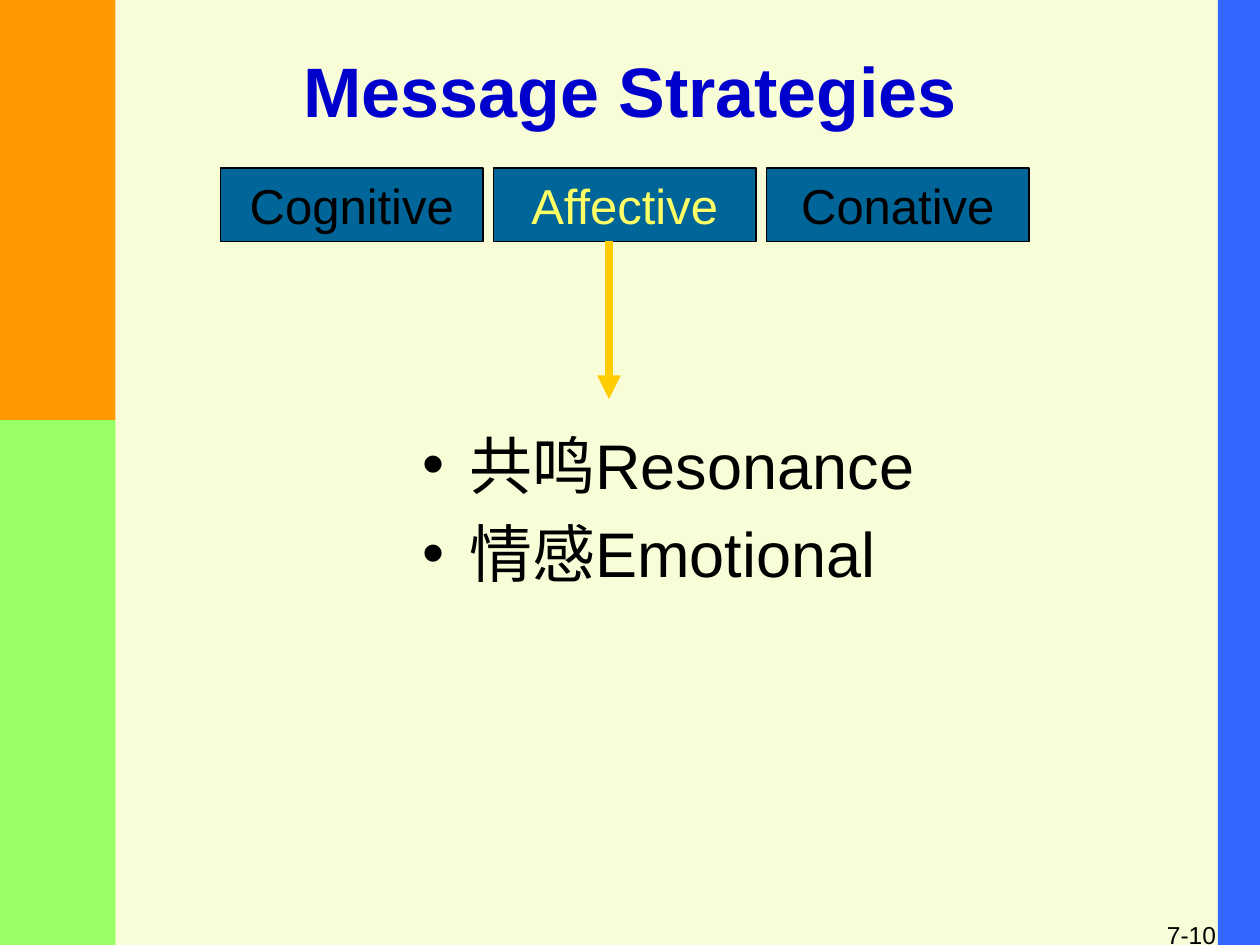
from dataclasses import dataclass

from lxml import etree
from pptx import Presentation
from pptx.dml.color import RGBColor
from pptx.enum.shapes import MSO_CONNECTOR, MSO_SHAPE
from pptx.enum.text import MSO_ANCHOR, MSO_AUTO_SIZE, PP_ALIGN
from pptx.oxml.ns import qn
from pptx.util import Pt

PX = 9525
RECT = MSO_SHAPE.RECTANGLE
LINE = MSO_CONNECTOR.STRAIGHT
MIDDLE = MSO_ANCHOR.MIDDLE
TOP = MSO_ANCHOR.TOP
FIXED = MSO_AUTO_SIZE.NONE
CENTER = PP_ALIGN.CENTER
RIGHT = PP_ALIGN.RIGHT
LEFT = PP_ALIGN.LEFT


@dataclass(frozen=True)
class Theme:
    font: str = "Arial"
    paper: str = "F9FDD7"
    ink: str = "000000"
    title: str = "0000CC"
    box: str = "006699"
    active: str = "FFFF66"
    arrow: str = "FFCC00"
    blue: str = "3366FF"
    orange: str = "FF9900"
    green: str = "99FF66"
    title_size: int = 40
    list_size: int = 36
    box_size: int = 28
    page_size: int = 14


THEME = Theme()


def px(*values):
    return [value * PX for value in values]


def rgb(code):
    return RGBColor.from_string(code)


def place(shape, left, top, width, height):
    shape.left, shape.top, shape.width, shape.height = px(left, top, width, height)


def write(shape, lines, size, color, align, anchor=MIDDLE, wrap=True, bold=False):
    frame = shape.text_frame
    frame.auto_size = FIXED
    frame.word_wrap = wrap
    frame.vertical_anchor = anchor
    for index, line in enumerate(lines):
        para = frame.add_paragraph() if index else frame.paragraphs[0]
        para.alignment = align
        run = para.add_run()
        run.text = line
        run.font.name = THEME.font
        run.font.size = Pt(size)
        run.font.bold = bold
        run.font.color.rgb = rgb(color)


def add_rect(slide, area, fill):
    shape = slide.shapes.add_shape(RECT, *px(*area))
    shape.shadow.inherit = False
    shape.fill.solid()
    shape.fill.fore_color.rgb = rgb(fill)
    shape.line.fill.background()
    return shape


def add_box(slide, area, label, color):
    box = add_rect(slide, area, THEME.box)
    box.line.color.rgb = rgb(THEME.ink)
    box.line.width = Pt(1)
    write(box, [label], THEME.box_size, color, CENTER, wrap=False)


def add_arrow(slide, start, end):
    arrow = slide.shapes.add_connector(LINE, *px(*start, *end))
    arrow.line.color.rgb = rgb(THEME.arrow)
    arrow.line.width = Pt(4.5)
    etree.SubElement(arrow.line._get_or_add_ln(), qn("a:tailEnd"), type="triangle")
    etree.SubElement(arrow._element.spPr, qn("a:effectLst"))


def add_page(slide, area, label):
    page = slide.shapes.add_textbox(*px(*area))
    write(page, [label], THEME.page_size, THEME.ink, RIGHT, wrap=False)


def main():
    deck = Presentation()
    deck.slide_width, deck.slide_height = px(960, 720)
    slide = deck.slides.add_slide(deck.slide_layouts[1])
    slide.background.fill.solid()
    slide.background.fill.fore_color.rgb = rgb(THEME.paper)

    title, body = slide.placeholders
    place(title, 72, 16, 816, 104)
    write(title, ["Message Strategies"], THEME.title_size, THEME.title, CENTER, bold=True)
    place(body, 312, 320, 496, 312)
    write(body, ["共鸣Resonance", "情感Emotional"], THEME.list_size, THEME.ink, LEFT, TOP)

    tabs = [("Cognitive", THEME.ink), ("Affective", THEME.active), ("Conative", THEME.ink)]
    for index, (label, color) in enumerate(tabs):
        add_box(slide, (168 + index * 208, 128, 200, 56), label, color)
    add_arrow(slide, (464, 184), (464, 304))

    add_rect(slide, (928, 0, 32, 720), THEME.blue)
    add_rect(slide, (0, 0, 88, 320), THEME.orange)
    add_rect(slide, (0, 320, 88, 400), THEME.green)
    add_page(slide, (736, 688, 200, 48), "7-10")
    deck.save("out.pptx")


if __name__ == "__main__":
    main()
